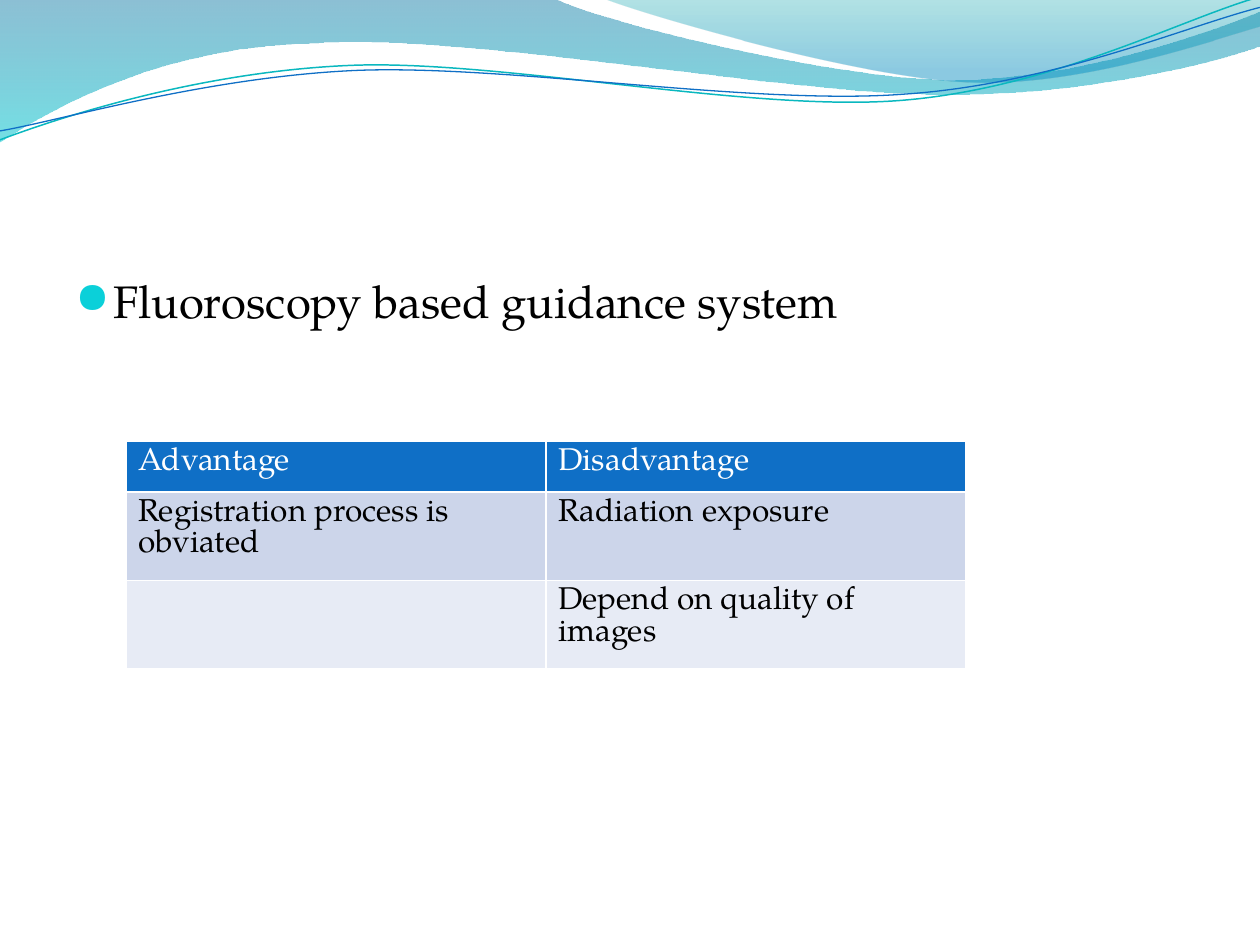
from dataclasses import dataclass

from lxml.etree import SubElement as Sub
from pptx import Presentation
from pptx.dml.color import RGBColor as Rgb
from pptx.oxml.ns import qn
from pptx.shapes.autoshape import Shape
from pptx.slide import Slide
from pptx.table import _Cell as Cell
from pptx.text.text import Font
from pptx.text.text import _Paragraph as Para
from pptx.util import Cm, Pt

Point = tuple[float, float]


@dataclass(frozen=True)
class Theme:
    font: str = "TeX Gyre Pagella"
    sign: str = "OpenSymbol"
    body: float = 26
    small: float = 18
    ink: str = "000000"
    paper: str = "FFFFFF"
    head: str = "0F6FC6"
    bands: tuple[str, str] = ("CCD5EA", "E7EBF5")
    dot: str = "0BD0D9"
    teal: str = "0AB8BF"


@dataclass(frozen=True)
class Stop:
    pos: float
    color: str
    alpha: int


@dataclass(frozen=True)
class Wave:
    """Each leg holds one point (straight) or three (Bezier), in cm."""
    start: Point
    legs: tuple[tuple[Point, ...], ...]
    stops: tuple[Stop, ...] = ()
    line: str = ""
    width: float = 0


THEME = Theme()

WAVES = (
    Wave((0, 0), (
        ((11.18, -0.03),),
        ((12.09, 0.43), (16.87, 1.6), (19.25, 1.6)),
        ((21.67, 1.6), (24.33, 0.66), (25.4, 0.23)),
        ((25.43, 0.91),),
        ((24.97, 1.12), (22.1, 1.93), (18.95, 1.9)),
        ((15.8, 1.9), (9.7, 0.71), (6.53, 0.86)),
        ((3.28, 0.91), (1.17, 2.11), (-0.03, 2.87)),
    ), stops=(Stop(0, "0074A1", 45), Stop(1, "00C6CF", 55))),
    Wave((12.17, -0.03), (
        ((12.93, 0.28), (17.32, 1.57), (19.53, 1.65)),
        ((21.74, 1.75), (24.41, 0.81), (25.4, 0.53)),
        ((25.4, 0),),
    ), stops=(Stop(0, "00A1A9", 30), Stop(0.8, "008BBF", 45))),
    Wave((0, 2.82), (
        ((1.22, 2.36), (4.01, 1.45), (7.04, 1.32)),
        ((10.03, 1.19), (15.06, 2.26), (18.11, 2.03)),
        ((21.16, 1.8), (23.83, 0.38), (25.35, -0.05)),
    ), line=THEME.teal, width=0.85),
    Wave((0, 2.64), (
        ((1.19, 2.44), (4.17, 1.55), (7.19, 1.42)),
        ((10.24, 1.3), (15.16, 2.13), (18.21, 1.9)),
        ((21.23, 1.7), (23.9, 0.53), (25.4, 0.15)),
    ), line=THEME.head, width=0.75),
)

ROWS = (
    ("Advantage", "Disadvantage"),
    ("Registration process is obviated", "Radiation exposure"),
    ("", "Depend on quality of images"),
)


def bend(shape: Shape, wave: Wave) -> None:
    """Join each three straight steps of a Bezier leg into one curve."""
    steps = iter(list(shape.element.spPr.iter(qn("a:lnTo"))))
    for leg in wave.legs:
        first, *rest = [next(steps) for _ in leg]
        if rest:
            first.tag = qn("a:cubicBezTo")
            for step in rest:
                first.append(step[0])
                step.getparent().remove(step)


def shade(shape: Shape, stops: tuple[Stop, ...]) -> None:
    """Fill from top to bottom with see-through colours."""
    fill = shape.fill
    fill.gradient()
    fill.gradient_angle = 270
    for mark, stop in zip(fill.gradient_stops, stops):
        mark.position = stop.pos
        mark.color.rgb = Rgb.from_string(stop.color)
    tints = list(shape.element.spPr.iter(qn("a:srgbClr")))
    for tint, stop in zip(tints, stops):
        Sub(tint, qn("a:alpha"), val=str(stop.alpha * 1000))


def draw_wave(slide: Slide, wave: Wave) -> None:
    start, *pts = [(Cm(x), Cm(y)) for leg in ((wave.start,), *wave.legs)
                   for x, y in leg]
    pen = slide.shapes.build_freeform(*start)
    pen.add_line_segments(pts, close=bool(wave.stops))
    shape = pen.convert_to_shape()
    bend(shape, wave)
    shape.shadow.inherit = False
    if wave.stops:
        shade(shape, wave.stops)
        shape.line.fill.background()
    else:
        shape.fill.background()
        shape.line.color.rgb = Rgb.from_string(wave.line)
        shape.line.width = Pt(wave.width)


def style(font: Font, size: float, color: str) -> None:
    font.name, font.size, font.bold = THEME.font, Pt(size), False
    font.color.rgb = Rgb.from_string(color)


def add_dot(para: Para) -> None:
    """Hang a round bullet in front of the paragraph."""
    props = para._p.get_or_add_pPr()
    props.set("marL", str(Cm(0.76)))
    props.set("indent", str(-Cm(0.76)))
    Sub(Sub(props, qn("a:buClr")), qn("a:srgbClr"), val=THEME.dot)
    Sub(props, qn("a:buSzPct"), val="95000")
    Sub(props, qn("a:buFont"), typeface=THEME.sign)
    Sub(props, qn("a:buChar"), char="●")


def draw_body(slide: Slide, text: str) -> None:
    frame = slide.shapes.add_textbox(
        Cm(1.27), Cm(5.38), Cm(22.86), Cm(12.19)).text_frame
    frame.word_wrap = True
    para = frame.paragraphs[0]
    para.text = text
    para.space_before = Pt(0.2 * THEME.body)
    add_dot(para)
    style(para.font, THEME.body, THEME.ink)


def edge(cell: Cell) -> None:
    """Draw white borders on all four sides."""
    props = cell._tc.get_or_add_tcPr()
    for side in "LRTB":
        line = Sub(props, qn(f"a:ln{side}"), w=str(Pt(1)))
        Sub(Sub(line, qn("a:solidFill")), qn("a:srgbClr"), val=THEME.paper)


def draw_table(slide: Slide, rows: tuple[tuple[str, ...], ...]) -> None:
    grid = slide.shapes.add_table(
        len(rows), len(rows[0]), Cm(2.54), Cm(8.89),
        Cm(16.93), Cm(1.03) * len(rows)).table
    for r, row in enumerate(rows):
        top = r == 0
        back = THEME.head if top else THEME.bands[(r - 1) % 2]
        for c, text in enumerate(row):
            cell = grid.cell(r, c)
            edge(cell)
            cell.fill.solid()
            cell.fill.fore_color.rgb = Rgb.from_string(back)
            if text:
                # Row heights follow run fonts, not paragraph fonts.
                run = cell.text_frame.paragraphs[0].add_run()
                run.text = text
                style(run.font, THEME.small,
                      THEME.paper if top else THEME.ink)


def main() -> None:
    deck = Presentation()
    deck.slide_width, deck.slide_height = Cm(25.4), Cm(19.05)
    slide = deck.slides.add_slide(deck.slide_layouts[6])
    for wave in WAVES:
        draw_wave(slide, wave)
    draw_body(slide, "Fluoroscopy based guidance system")
    draw_table(slide, ROWS)
    deck.save("out.pptx")


if __name__ == "__main__":
    main()
